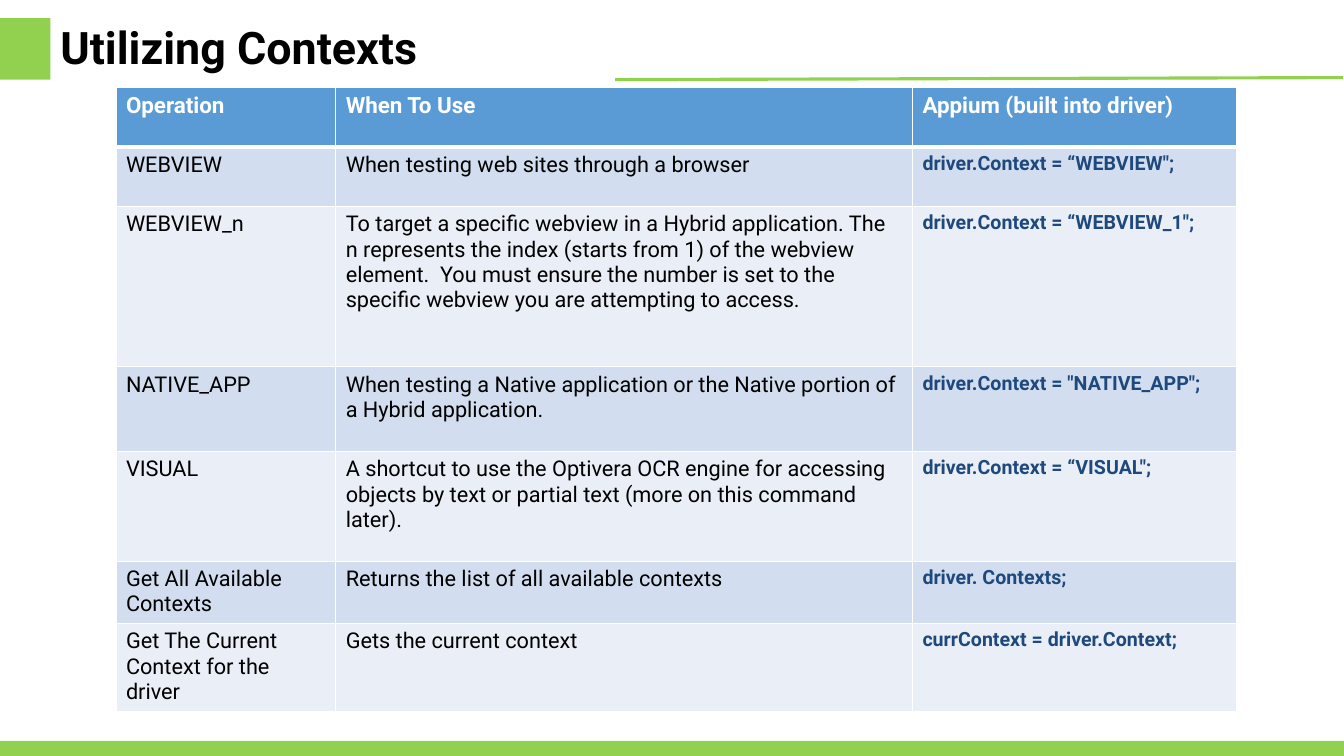
from dataclasses import dataclass

from lxml.etree import SubElement
from pptx import Presentation
from pptx.dml.color import RGBColor
from pptx.enum.shapes import MSO_CONNECTOR as Connector, MSO_SHAPE as Shape
from pptx.enum.text import MSO_ANCHOR as Anchor
from pptx.oxml.ns import qn
from pptx.util import Inches, Pt


@dataclass(frozen=True)
class Theme:
    font: str = "Roboto"
    green: str = "92D050"
    black: str = "000000"
    white: str = "FFFFFF"
    header: str = "5B9BD5"
    bands: tuple = ("D2DEEF", "EAEFF7")
    code: str = "1F497D"
    title_size: float = 32
    header_size: float = 16
    body_size: float = 15.5
    code_size: float = 14


theme = Theme()


def write(frame, text, size, color, bold=False, spacing=1.0):
    frame.word_wrap = True
    para = frame.paragraphs[0]
    para.line_spacing = spacing
    span = para.add_run()
    span.text = text
    span.font.name = theme.font
    span.font.size = Pt(size)
    span.font.bold = bold
    span.font.color.rgb = RGBColor.from_string(color)


def add_borders(cell, bottom):
    properties = cell._tc.get_or_add_tcPr()
    for side, points in (("lnL", 1), ("lnR", 1), ("lnT", 1), ("lnB", bottom)):
        line = SubElement(properties, qn(f"a:{side}"), w=str(Pt(points)))
        fill = SubElement(line, qn("a:solidFill"))
        SubElement(fill, qn("a:srgbClr"), val=theme.white)


deck = Presentation()
deck.slide_width, deck.slide_height = Inches(13.33), Inches(7.5)
page = deck.slides.add_slide(deck.slide_layouts[6])

# Green title marker and bottom bar
for bounds in ((0, 0.18, 0.5, 0.61), (0, 7.35, 13.33, 0.15)):
    bar = page.shapes.add_shape(Shape.RECTANGLE, *map(Inches, bounds))
    bar.shadow.inherit = False
    bar.fill.solid()
    bar.fill.fore_color.rgb = RGBColor.from_string(theme.green)
    bar.line.fill.background()

# Green line beside the title
rule = page.shapes.add_connector(
    Connector.STRAIGHT, Inches(6.1), Inches(0.79), Inches(13.32), Inches(0.77))
rule.line.color.rgb = RGBColor.from_string(theme.green)
rule.line.width = Pt(2.25)
SubElement(rule._element.spPr, qn("a:effectLst"))

# Title
box = page.shapes.add_textbox(Inches(0.5), Inches(0.06), Inches(5.6), Inches(0.87))
box.text_frame.vertical_anchor = Anchor.MIDDLE
write(box.text_frame, "Utilizing Contexts", theme.title_size, theme.black,
      bold=True, spacing=0.9)

# Context table
contexts = [
    ("Operation", "When To Use", "Appium (built into driver)"),
    ("WEBVIEW", "When testing web sites through a browser",
     'driver.Context = “WEBVIEW";'),
    ("WEBVIEW_n",
     "To target a specific webview in a Hybrid application. The n represents "
     "the index (starts from 1) of the webview element.  You must ensure the "
     "number is set to the specific webview you are attempting to access.",
     'driver.Context = “WEBVIEW_1";'),
    ("NATIVE_APP",
     "When testing a Native application or the Native portion of a Hybrid application.",
     'driver.Context = "NATIVE_APP";'),
    ("VISUAL",
     "A shortcut to use the Optivera OCR engine for accessing objects by text "
     "or partial text (more on this command later).",
     'driver.Context = “VISUAL";'),
    ("Get All Available Contexts", "Returns the list of all available contexts",
     "driver. Contexts;"),
    ("Get The Current Context for the driver", "Gets the current context",
     "currContext = driver.Context;"),
]
widths = (2.18, 5.72, 3.22)
heights = (0.59, 0.59, 1.59, 0.84, 1.09, 0.59, 0.84)
table = page.shapes.add_table(
    len(contexts), len(widths), Inches(1.15), Inches(0.87),
    Inches(sum(widths)), Inches(sum(heights))).table
for column, width in zip(table.columns, widths):
    column.width = Inches(width)
for row, height in zip(table.rows, heights):
    row.height = Inches(height)

for row_index, texts in enumerate(contexts):
    is_header = row_index == 0
    fill = theme.header if is_header else theme.bands[(row_index - 1) % 2]
    for column_index, text in enumerate(texts):
        cell = table.cell(row_index, column_index)
        add_borders(cell, bottom=3 if is_header else 1)
        cell.fill.solid()
        cell.fill.fore_color.rgb = RGBColor.from_string(fill)
        if is_header:
            write(cell.text_frame, text, theme.header_size, theme.white, bold=True)
        elif column_index == 2:
            write(cell.text_frame, text, theme.code_size, theme.code, bold=True)
        else:
            write(cell.text_frame, text, theme.body_size, theme.black)

deck.save("out.pptx")
